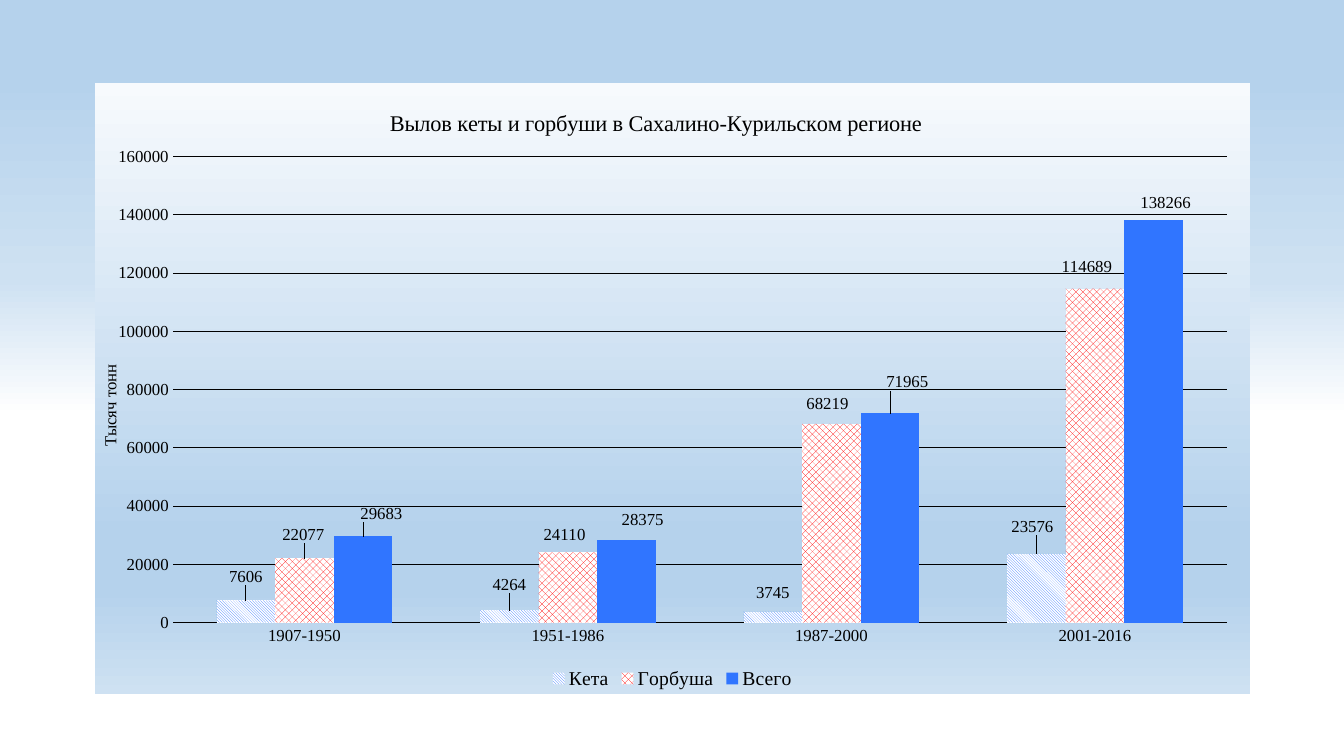
from dataclasses import dataclass

from lxml import etree
from pptx import Presentation
from pptx.chart.data import CategoryChartData
from pptx.dml.color import RGBColor
from pptx.enum.chart import XL_CHART_TYPE, XL_LABEL_POSITION, XL_LEGEND_POSITION, XL_TICK_MARK
from pptx.enum.dml import MSO_PATTERN
from pptx.enum.text import MSO_AUTO_SIZE, PP_ALIGN
from pptx.oxml import parse_xml
from pptx.oxml.ns import nsdecls, qn
from pptx.util import Emu, Inches, Pt

COLUMNS = XL_CHART_TYPE.COLUMN_CLUSTERED
LABEL_ABOVE = XL_LABEL_POSITION.OUTSIDE_END
LEGEND_BELOW = XL_LEGEND_POSITION.BOTTOM
NO_TICKS = XL_TICK_MARK.NONE
DIAGONAL = MSO_PATTERN.LIGHT_DOWNWARD_DIAGONAL
DOTTED = MSO_PATTERN.PERCENT_50
FIT_SHAPE = MSO_AUTO_SIZE.SHAPE_TO_FIT_TEXT
CENTER = PP_ALIGN.CENTER

SLIDE_WIDTH, SLIDE_HEIGHT = Inches(13.33), Inches(7.5)


@dataclass(frozen=True)
class Theme:
    face: str = "Times New Roman"
    ink: str = "000000"
    paper: str = "FFFFFF"
    blue: str = "3075FF"
    red: str = "FF0000"
    sky: str = "B5D2EC"
    haze: str = "CEE1F2"
    mist: str = "F7FAFD"
    title: float = 16
    legend: float = 14
    text: float = 12
    base: float = 10


@dataclass(frozen=True)
class Area:
    """A rectangle in percent of its container."""
    left: float
    top: float
    width: float
    height: float

    def on_slide(self) -> tuple[Emu, Emu, Emu, Emu]:
        return (Emu(int(SLIDE_WIDTH * self.left / 100)), Emu(int(SLIDE_HEIGHT * self.top / 100)),
                Emu(int(SLIDE_WIDTH * self.width / 100)), Emu(int(SLIDE_HEIGHT * self.height / 100)))


@dataclass(frozen=True)
class Catch:
    """One fish series; label_shifts are (x, y) in percent of the chart."""
    fish: str
    tons: tuple[int, ...]
    color: str
    pattern: MSO_PATTERN | None
    label_shifts: tuple[tuple[float, float], ...]


THEME = Theme()
CHART_AREA = Area(7.05, 10.95, 85.95, 80.8)
PLOT_AREA = Area(6.75, 12.1, 91.25, 76.3)
TITLE_CORNER = (25.2, 3.6)
UNIT_AREA = Area(4.35, 51.6, 7.65, 4)
SLIDE_STOPS = ((0, THEME.sky), (10, THEME.sky), (37, THEME.haze), (55, THEME.paper))
CHART_STOPS = ((0, THEME.mist), (74, THEME.sky), (83, THEME.sky), (100, THEME.haze))
PERIODS = ("1907-1950", "1951-1986", "1987-2000", "2001-2016")
CATCHES = (
    Catch("Кета", (7606, 4264, 3745, 23576), THEME.blue, DIAGONAL,
          ((0, -1.8), (0, -2.1), (0, -1), (-0.35, -2.3))),
    Catch("Горбуша", (22077, 24110, 68219, 114689), THEME.red, DOTTED,
          ((-0.1, -1.8), (-0.3, -0.8), (-0.35, -1.15), (-0.7, -1.5))),
    Catch("Всего", (29683, 28375, 71965, 138266), THEME.blue, None,
          ((1.6, -1.65), (1.4, -1.15), (1.5, -2.95), (1.05, -0.65))),
)


def rgb(color: str) -> RGBColor:
    return RGBColor.from_string(color)


def style(font, size: float) -> None:
    font.name = THEME.face
    font.size = Pt(size)
    font.bold = False
    font.color.rgb = rgb(THEME.ink)


def vertical_gradient(stops: tuple[tuple[int, str], ...]) -> etree._Element:
    marks = "".join(f'<a:gs pos="{share * 1000}"><a:srgbClr val="{color}"/></a:gs>'
                    for share, color in stops)
    return parse_xml(f'<a:gradFill {nsdecls("a")} rotWithShape="1"><a:gsLst>{marks}</a:gsLst>'
                     '<a:lin ang="5400000" scaled="0"/></a:gradFill>')


def set_layout(owner: etree._Element, index: int, **settings: float | str) -> None:
    """Give a chart part a manual layout; numbers are percent of the chart."""
    for old in owner.findall(qn("c:layout")):
        owner.remove(old)
    layout = etree.Element(qn("c:layout"))
    manual = etree.SubElement(layout, qn("c:manualLayout"))
    for key, value in settings.items():
        shown = value if isinstance(value, str) else f"{value / 100:.4f}"
        etree.SubElement(manual, qn(f"c:{key}")).set("val", shown)
    owner.insert(index, layout)


def paint_background(slide) -> None:
    slide.background.fill.solid()
    properties = slide.element.find(".//" + qn("p:bgPr"))
    properties.replace(properties[0], vertical_gradient(SLIDE_STOPS))


def style_axes(chart) -> None:
    for axis in (chart.category_axis, chart.value_axis):
        axis.major_tick_mark = axis.minor_tick_mark = NO_TICKS
        axis.format.line.fill.background()
        style(axis.tick_labels.font, THEME.text)
    scale = chart.value_axis
    scale.minimum_scale, scale.maximum_scale, scale.major_unit = 0, 160000, 20000
    scale.has_major_gridlines = True
    grid = scale.major_gridlines.format.line
    grid.width = Pt(0.75)
    grid.color.rgb = rgb(THEME.ink)


def style_catch(series, catch: Catch) -> None:
    fill = series.format.fill
    if catch.pattern is None:
        fill.solid()
        fill.fore_color.rgb = rgb(catch.color)
    else:
        fill.patterned()
        fill.pattern = catch.pattern
        fill.fore_color.rgb = rgb(catch.color)
        fill.back_color.rgb = rgb(THEME.paper)
    series.invert_if_negative = False
    labels = series.data_labels
    labels.show_value = True
    labels.position = LABEL_ABOVE
    style(labels.font, THEME.text)
    for index in range(len(catch.tons)):
        label = series.points[index].data_label
        style(label.font, THEME.text)
        label.position = LABEL_ABOVE


def add_catch_chart(slide) -> None:
    data = CategoryChartData(number_format="General")
    data.categories = PERIODS
    for catch in CATCHES:
        data.add_series(catch.fish, catch.tons)
    chart = slide.shapes.add_chart(COLUMNS, *CHART_AREA.on_slide(), data).chart
    style(chart.font, THEME.base)

    chart.has_title = True
    heading = chart.chart_title.text_frame.paragraphs[0].add_run()
    heading.text = "Вылов кеты и горбуши в Сахалино-Курильском регионе"
    style(heading.font, THEME.title)
    chart.has_legend = True
    chart.legend.position = LEGEND_BELOW
    chart.legend.include_in_layout = False
    style(chart.legend.font, THEME.legend)

    style_axes(chart)
    plot = chart.plots[0]
    plot.gap_width, plot.overlap, plot.vary_by_categories = 150, 0, False
    for series, catch in zip(plot.series, CATCHES):
        style_catch(series, catch)

    root = chart.element
    body = root.find(qn("c:chart"))
    left, top = TITLE_CORNER
    set_layout(body.find(qn("c:title")), 1, xMode="edge", yMode="edge", x=left, y=top)
    set_layout(body.find(qn("c:plotArea")), 0, layoutTarget="inner", xMode="edge", yMode="edge",
               x=PLOT_AREA.left, y=PLOT_AREA.top, w=PLOT_AREA.width, h=PLOT_AREA.height)
    shifts = [shift for catch in CATCHES for shift in catch.label_shifts]
    for label, (right, down) in zip(list(root.iter(qn("c:dLbl"))), shifts):
        set_layout(label, 1, x=right, y=down)
    surface = parse_xml(f'<c:spPr {nsdecls("c", "a")}><a:ln><a:noFill/></a:ln></c:spPr>')
    surface.insert(0, vertical_gradient(CHART_STOPS))
    body.addnext(surface)


def add_unit_caption(slide) -> None:
    caption = slide.shapes.add_textbox(*UNIT_AREA.on_slide())
    caption.rotation = 270
    frame = caption.text_frame
    frame.word_wrap = False
    frame.auto_size = FIT_SHAPE
    frame.paragraphs[0].alignment = CENTER
    unit = frame.paragraphs[0].add_run()
    unit.text = "Тысяч тонн"
    style(unit.font, THEME.text)


def main() -> None:
    deck = Presentation()
    deck.slide_width, deck.slide_height = SLIDE_WIDTH, SLIDE_HEIGHT
    slide = deck.slides.add_slide(deck.slide_layouts[6])
    paint_background(slide)
    add_catch_chart(slide)
    add_unit_caption(slide)
    deck.save("out.pptx")


if __name__ == "__main__":
    main()
